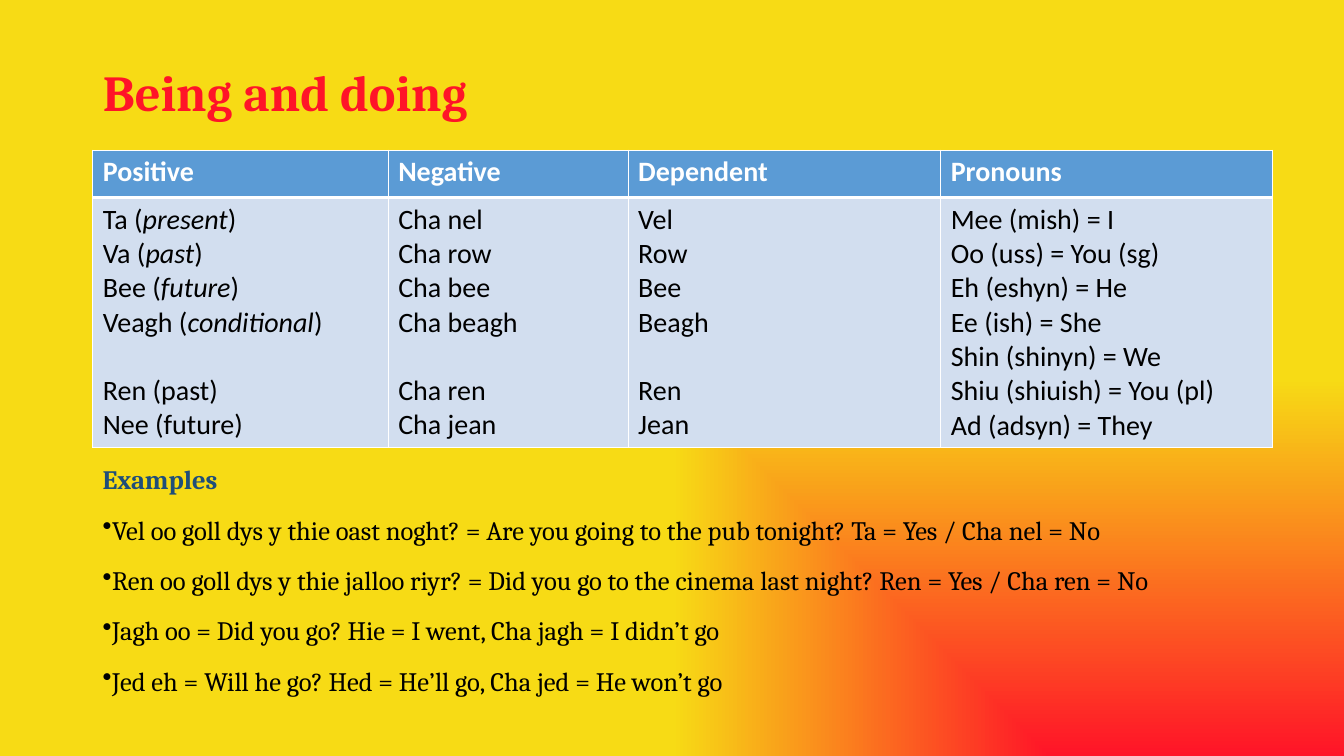
"""Build the slide "Being and doing" with a verb table and example sentences."""
import pptx
import pptx.dml.color
import pptx.enum.text
import pptx.oxml
import pptx.oxml.ns
import pptx.util
from pptx.util import Inches, Pt

TITLE = "Being and doing"
COLUMNS = [
    ("Positive", 2.93, [
        ["Ta (*present*)", "Va (*past*)", "Bee (*future*)", "Veagh (*conditional*)"],
        ["Ren (past)", "Nee (future)"],
    ]),
    ("Negative", 2.38, [
        ["Cha nel", "Cha row", "Cha bee", "Cha beagh"],
        ["Cha ren", "Cha jean"],
    ]),
    ("Dependent", 3.1, [
        ["Vel", "Row", "Bee", "Beagh"],
        ["Ren", "Jean"],
    ]),
    ("Pronouns", 3.29, [
        ["Mee (mish) = I", "Oo (uss) = You (sg)", "Eh (eshyn) = He", "Ee (ish) = She",
         "Shin (shinyn) = We", "Shiu (shiuish) = You (pl)", "Ad (adsyn) = They"],
    ]),
]
ROW_HEIGHTS = [0.47, 2.42]
EXAMPLES_HEADING = "Examples"
EXAMPLES = [
    "Vel oo goll dys y thie oast noght? = Are you going to the pub tonight? Ta = Yes / Cha nel = No",
    "Ren oo goll dys y thie jalloo riyr? = Did you go to the cinema last night? Ren = Yes / Cha ren = No",
    "Jagh oo = Did you go? Hie = I went, Cha jagh = I didn’t go",
    "Jed eh = Will he go? Hed = He’ll go, Cha jed = He won’t go",
]
LEFT = 0.92
GROUP_GAP = 24.4
RED, YELLOW, NAVY = "FF1428", "F7DB15", "1F4E79"
WHITE, BLACK, HEADER_BLUE, BODY_BLUE = "FFFFFF", "000000", "5B9BD5", "D2DEEF"


def color(value):
    return pptx.dml.color.RGBColor.from_string(value)


def xml(text):
    return pptx.oxml.parse_xml(text.replace(" ", f" {pptx.oxml.ns.nsdecls('a')} ", 1))


def set_font(para, name, size, value, bold=False):
    para.font.name = name
    para.font.size = Pt(size)
    para.font.bold = bold
    para.font.color.rgb = color(value)


def next_para(frame, index):
    return frame.add_paragraph() if index else frame.paragraphs[0]


def paint_background(page):
    fill = page.background.fill
    fill.gradient()
    for stop, value in zip(fill.gradient_stops, (RED, YELLOW)):
        stop.color.rgb = color(value)
    gradient = page.element.xpath("//a:gradFill")[0]
    for line in gradient.xpath("a:lin"):
        gradient.replace(line, xml(
            '<a:path path="rect"><a:fillToRect l="100000" t="100000"/></a:path>'))


def style_cell(cell, fill, borders):
    properties = cell._tc.get_or_add_tcPr()
    for side, width in zip("LRTB", borders):
        properties.append(xml(
            f'<a:ln{side} w="{Pt(width)}"><a:solidFill><a:srgbClr val="{WHITE}"/>'
            f'</a:solidFill></a:ln{side}>'))
    cell.fill.solid()
    cell.fill.fore_color.rgb = color(fill)


def fill_body(frame, groups):
    lines = [(line, number and not place) for number, group in enumerate(groups)
             for place, line in enumerate(group)]
    for index, (line, opens_group) in enumerate(lines):
        para = next_para(frame, index)
        set_font(para, "Calibri", 20, BLACK)
        if opens_group:
            para.space_before = Pt(GROUP_GAP)
        for part, text in enumerate(line.split("*")):
            span = para.add_run()
            span.text = text
            if part % 2:
                span.font.italic = True


def add_title(page):
    title = page.shapes.title
    title.left, title.top = Inches(LEFT), Inches(0.27)
    title.width, title.height = Inches(11.5), Inches(1.34)
    frame = title.text_frame
    frame.text = TITLE
    frame.vertical_anchor = pptx.enum.text.MSO_ANCHOR.MIDDLE
    para = frame.paragraphs[0]
    para.alignment = pptx.enum.text.PP_ALIGN.LEFT
    para.line_spacing = 0.9
    set_font(para, "Cambria", 36, RED, True)


def add_verbs(page):
    width = sum(column[1] for column in COLUMNS)
    table = page.shapes.add_table(
        len(ROW_HEIGHTS), len(COLUMNS), Inches(LEFT), Inches(1.49),
        Inches(width), Inches(sum(ROW_HEIGHTS))).table
    for row, height in zip(table.rows, ROW_HEIGHTS):
        row.height = Inches(height)
    for index, (heading, column_width, groups) in enumerate(COLUMNS):
        table.columns[index].width = Inches(column_width)
        header, body = table.cell(0, index), table.cell(1, index)
        header.text_frame.text = heading
        set_font(header.text_frame.paragraphs[0], "Calibri", 20, WHITE, True)
        style_cell(header, HEADER_BLUE, (1, 1, 1, 3))
        fill_body(body.text_frame, groups)
        style_cell(body, BODY_BLUE, (1, 1, 3, 1))


def add_examples(page):
    box = page.shapes.add_textbox(Inches(LEFT), Inches(4.5), Inches(11.82), Inches(2.49))
    frame = box.text_frame
    frame.word_wrap = True
    frame.auto_size = pptx.enum.text.MSO_AUTO_SIZE.SHAPE_TO_FIT_TEXT
    for index, text in enumerate([EXAMPLES_HEADING] + EXAMPLES):
        para = next_para(frame, index)
        para.text = text
        para.line_spacing = Pt(36 if index else 26)
        set_font(para, "Cambria", 19, BLACK if index else NAVY, not index)
        if index:
            properties = para._p.get_or_add_pPr()
            properties.set("marL", "0")
            properties.set("indent", str(Inches(-0.2)))
            properties.find(pptx.oxml.ns.qn("a:defRPr")).addprevious(
                xml('<a:buChar char="•"/>'))


def main():
    deck = pptx.Presentation()
    deck.slide_width, deck.slide_height = Inches(13.33), Inches(7.5)
    page = deck.slides.add_slide(deck.slide_layouts[5])
    paint_background(page)
    add_title(page)
    add_verbs(page)
    add_examples(page)
    deck.save("out.pptx")


if __name__ == "__main__":
    main()
